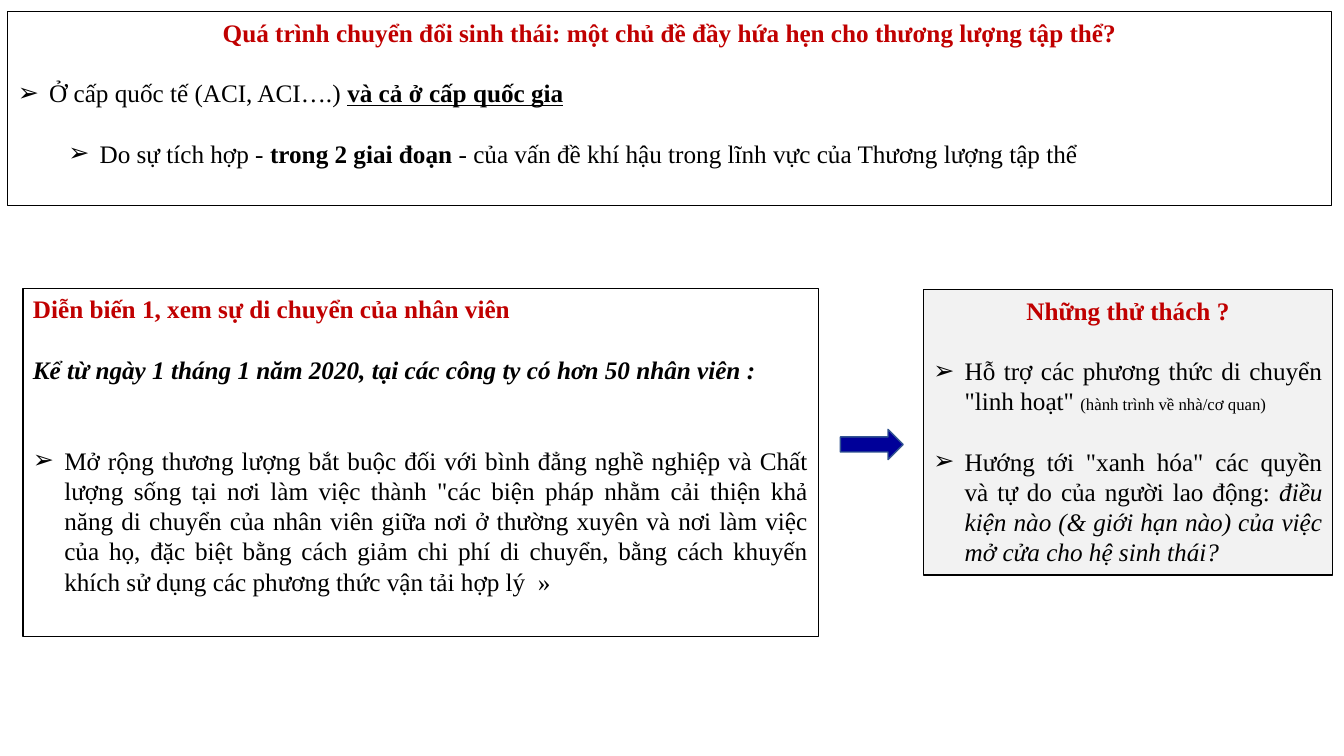
from lxml import etree
from pptx import Presentation
from pptx import util as u
from pptx.dml.color import RGBColor
from pptx.enum import shapes, text
from pptx.oxml.ns import qn

HUES = {"red": "C00000", "ink": "000000", "grey": "F2F2F2",
        "navy": "000099", "edge": "325491"}
ALIGN = text.PP_ALIGN


class Deck:
    """Holds the shared style and the current slide."""

    font, size, line = "Times New Roman", 18, 21.6

    def __init__(self):
        self.prs = Presentation()
        self.prs.slide_width, self.prs.slide_height = u.Cm(33.87), u.Cm(19.05)
        self.slide = self.prs.slides.add_slide(self.prs.slide_layouts[4])
        self.slots = {s.placeholder_format.idx: s for s in self.slide.placeholders}

    def place(self, idx, box, edge=None, fill=None, top=0.13):
        shape = self.slots.pop(idx)
        shape.left, shape.top, shape.width, shape.height = map(u.Cm, box)
        if edge:
            self.paint(shape.line, edge, 0.75)
        if fill:
            self.paint(shape, fill)
        frame = shape.text_frame
        frame.word_wrap = True
        frame.auto_size = text.MSO_AUTO_SIZE.NONE
        frame.vertical_anchor = text.MSO_ANCHOR.TOP
        frame.margin_left = frame.margin_right = u.Cm(0.25)
        frame.margin_top, frame.margin_bottom = u.Cm(top), u.Cm(0.13)
        return frame

    def paint(self, part, hue, width=None):
        part.fill.solid()
        part.fill.fore_color.rgb = RGBColor.from_string(HUES[hue])
        if width:
            part.width = u.Pt(width)

    def para(self, frame, runs, align=ALIGN.JUSTIFY, gap=0, level=None):
        """Adds one paragraph, bulleted when a level is given."""
        last = frame.paragraphs[-1]
        p = frame.add_paragraph() if last.runs else last
        p.alignment, p.line_spacing = align, u.Pt(self.line)
        p.space_before, p.space_after = u.Pt(gap * self.line), u.Pt(0)
        props = p._p.get_or_add_pPr()
        if level is None:
            props.set("marL", "0")
            props.set("indent", "0")
            etree.SubElement(props, qn("a:buNone"))
        else:
            p.level = level
            props.set("marL", str(u.Cm(0.79 + 1.27 * level)))
            props.set("indent", str(u.Cm(-0.79)))
            etree.SubElement(props, qn("a:buChar"), char="➢")
        for words, *look in runs:
            self.run(p, words, **(look[0] if look else {}))

    def run(self, p, words, hue="ink", size=size, bold=False, slant=False, under=False):
        r = p.add_run()
        r.text = words
        f = r.font
        f.name, f.size = self.font, u.Pt(size)
        f.bold, f.italic, f.underline = bold, slant, under
        f.color.rgb = RGBColor.from_string(HUES[hue])

    def arrow(self, box):
        shape = self.slide.shapes.add_shape(
            shapes.MSO_SHAPE.RIGHT_ARROW, *map(u.Cm, box))
        shape.shadow.inherit = False
        self.paint(shape, "navy")
        self.paint(shape.line, "edge", 1)

    def save(self):
        for spare in self.slots.values():
            spare.element.getparent().remove(spare.element)
        self.prs.save("out.pptx")


def main():
    deck = Deck()
    head = {"hue": "red", "bold": True}
    bold = {"bold": True}

    title = deck.place(0, (0.2, 0.3, 33.35, 1.02))
    deck.para(title, [("Quá trình chuyển đổi sinh thái: một chủ đề đầy hứa hẹn "
                       "cho thương lượng tập thể?", head)], ALIGN.CENTER)

    scope = deck.place(1, (0.2, 0.3, 33.35, 4.88), "ink", top=1.65)
    deck.para(scope, [("Ở cấp quốc tế (ACI, ACI….) ",),
                      ("và cả ở cấp quốc gia", {"bold": True, "under": True})], level=0)
    deck.para(scope, [("Do sự tích hợp - ",), ("trong 2 giai đoạn ", bold),
                      ("- của vấn đề khí hậu trong lĩnh vực của "
                       "Thương lượng tập thể",)], gap=1, level=1)

    step = deck.place(2, (0.58, 7.27, 20.04, 8.76), "ink")
    deck.para(step, [("Diễn biến 1, xem sự di chuyển của nhân viên ", head)])
    deck.para(step, [("Kể từ ngày 1 tháng 1 năm 2020, tại các công ty có hơn "
                      "50 nhân viên :", {"bold": True, "slant": True})], gap=1)
    deck.para(step, [("Mở rộng thương lượng bắt buộc đối với bình đẳng nghề nghiệp và "
                      "Chất lượng sống tại nơi làm việc thành \"các biện pháp nhằm cải "
                      "thiện khả năng di chuyển của nhân viên giữa nơi ở thường xuyên và "
                      "nơi làm việc của họ, đặc biệt bằng cách giảm chi phí di chuyển, "
                      "bằng cách khuyến khích sử dụng các phương thức vận tải "
                      "hợp lý  »",)], gap=2, level=0)

    tests = deck.place(3, (23.27, 7.3, 10.31, 7.19), "ink", "grey")
    deck.para(tests, [("Những thử thách ?", head)], ALIGN.CENTER)
    deck.para(tests, [("Hỗ trợ các phương thức di chuyển \"linh hoạt\" ",),
                      ("(hành trình về nhà/cơ quan)", {"size": 12})], gap=1, level=0)
    deck.para(tests, [("Hướng tới \"xanh hóa\" các quyền và tự do của người lao động: ",),
                      ("điều kiện nào (& giới hạn nào) của việc mở cửa cho hệ sinh thái?",
                       {"slant": True})], gap=1, level=0)

    deck.arrow((21.18, 10.82, 1.58, 0.76))
    deck.save()


if __name__ == "__main__":
    main()
